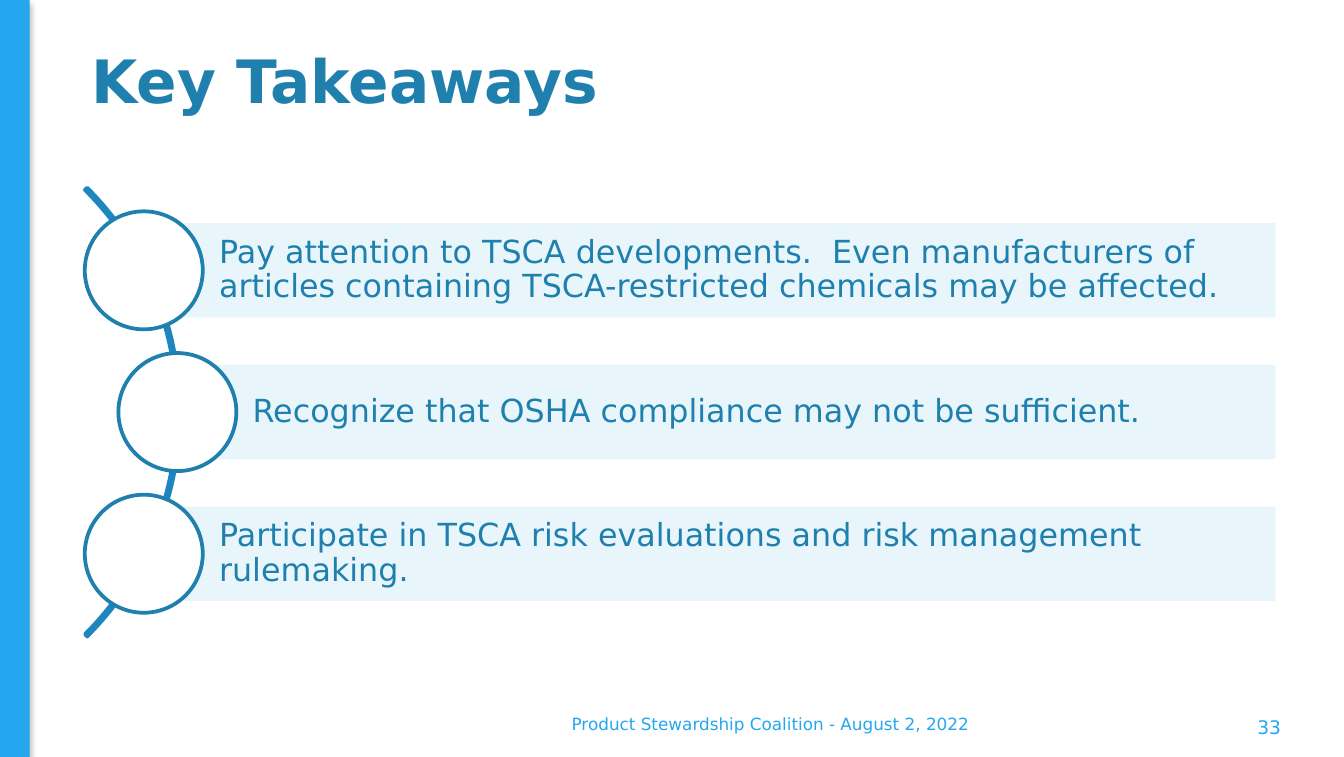
from dataclasses import dataclass

from pptx import Presentation
from pptx.dml.color import RGBColor
from pptx.enum import shapes, text
from pptx.oxml import parse_xml
from pptx.oxml.ns import nsdecls
from pptx.util import Inches, Pt


@dataclass(frozen=True)
class Theme:
    font: str = "DejaVu Sans"
    accent: str = "24A7EF"
    ink: str = "1F80AE"
    arc: str = "1D86BF"
    band: str = "D2EEFB"
    paper: str = "FFFFFF"
    title_size: int = 32
    takeaway_size: int = 17
    footer_size: int = 9
    number_size: int = 10
    outline: int = 2


THEME = Theme()
TAKEAWAYS = [
    "Pay attention to TSCA developments.  Even manufacturers of articles "
    "containing TSCA-restricted chemicals may be affected.",
    "Recognize that OSHA compliance may not be sufficient.",
    "Participate in TSCA risk evaluations and risk management rulemaking.",
]


def add_figure(slide, preset, box, fill=None, line=None):
    figure = slide.shapes.add_shape(preset, *map(Inches, box))
    figure.shadow.inherit = False
    if fill:
        figure.fill.solid()
        figure.fill.fore_color.rgb = RGBColor.from_string(fill)
    else:
        figure.fill.background()
    if line:
        figure.line.color.rgb = RGBColor.from_string(line)
        figure.line.width = Pt(THEME.outline)
    else:
        figure.line.fill.background()
    return figure


def write(frame, wording, size, color, align=text.PP_ALIGN.LEFT, bold=False, spacing=1.0):
    frame.word_wrap = True
    frame.auto_size = text.MSO_AUTO_SIZE.NONE
    frame.vertical_anchor = text.MSO_ANCHOR.MIDDLE
    paragraph = frame.paragraphs[0]
    paragraph.text = wording
    paragraph.alignment = align
    paragraph.line_spacing = spacing
    paragraph.font.name = THEME.font
    paragraph.font.size = Pt(size)
    paragraph.font.bold = bold
    paragraph.font.color.rgb = RGBColor.from_string(color)


def add_side_bar(slide, box):
    bar = add_figure(slide, shapes.MSO_SHAPE.RECTANGLE, box, THEME.accent)
    bar._element.spPr.find("{*}effectLst").append(parse_xml(
        f'<a:outerShdw {nsdecls("a")} blurRad="{Pt(3.1)}" dist="{Pt(1.8)}" '
        'dir="5400000" rotWithShape="0"><a:srgbClr val="000000">'
        '<a:alpha val="35000"/></a:srgbClr></a:outerShdw>'))


def add_title(slide, box):
    title = slide.shapes.title
    title.left, title.top, title.width, title.height = map(Inches, box)
    write(title.text_frame, "Key Takeaways", THEME.title_size, THEME.ink,
          bold=True, spacing=0.9)


def add_takeaway(slide, box, wording):
    left, top, width, height = box
    band = add_figure(slide, shapes.MSO_SHAPE.RECTANGLE, box, THEME.band)
    band._element.spPr.find("{*}solidFill")[0].append(
        parse_xml(f'<a:alpha {nsdecls("a")} val="50000"/>'))
    frame = band.text_frame
    frame.margin_left = Inches(0.56)
    frame.margin_top = frame.margin_right = frame.margin_bottom = Inches(0.05)
    write(frame, wording, THEME.takeaway_size, THEME.ink, spacing=0.9)
    diameter = height * 1.25
    add_figure(slide, shapes.MSO_SHAPE.OVAL,
               (left - diameter / 2, top + (height - diameter) / 2, diameter, diameter),
               THEME.paper, THEME.ink)


def add_takeaway_list(slide, box):
    left, top, width, height = box
    arc_size = 4.72
    arc = add_figure(slide, shapes.MSO_SHAPE.BLOCK_ARC,
                     (-3.38, top + (height - arc_size) / 2, arc_size, arc_size),
                     line=THEME.arc)
    for index, value in enumerate((189, 27, 0.005)):
        arc.adjustments[index] = value
    band_height = height / 4
    pitch = (height - band_height) / (len(TAKEAWAYS) - 1)
    for row, wording in enumerate(TAKEAWAYS):
        indent = 0.25 * (row % 2)
        add_takeaway(slide, (left + indent, top + row * pitch, width - indent, band_height),
                     wording)


def add_footer(slide, box, wording, size, align):
    footer = slide.shapes.add_textbox(*map(Inches, box))
    write(footer.text_frame, wording, size, THEME.accent, align)


def main():
    deck = Presentation()
    deck.slide_width, deck.slide_height = Inches(10), Inches(5.63)
    slide = deck.slides.add_slide(deck.slide_layouts[5])
    add_side_bar(slide, (0, 0, 0.22, 5.63))
    add_title(slide, (0.58, 0.2, 8.96, 0.85))
    add_takeaway_list(slide, (1.07, 1.66, 8.42, 2.81))
    add_footer(slide, (2.32, 5.23, 6.82, 0.3),
               "Product Stewardship Coalition - August 2, 2022",
               THEME.footer_size, text.PP_ALIGN.CENTER)
    add_footer(slide, (8.62, 5.31, 1.01, 0.2), "33",
               THEME.number_size, text.PP_ALIGN.RIGHT)
    deck.save("out.pptx")


if __name__ == "__main__":
    main()
